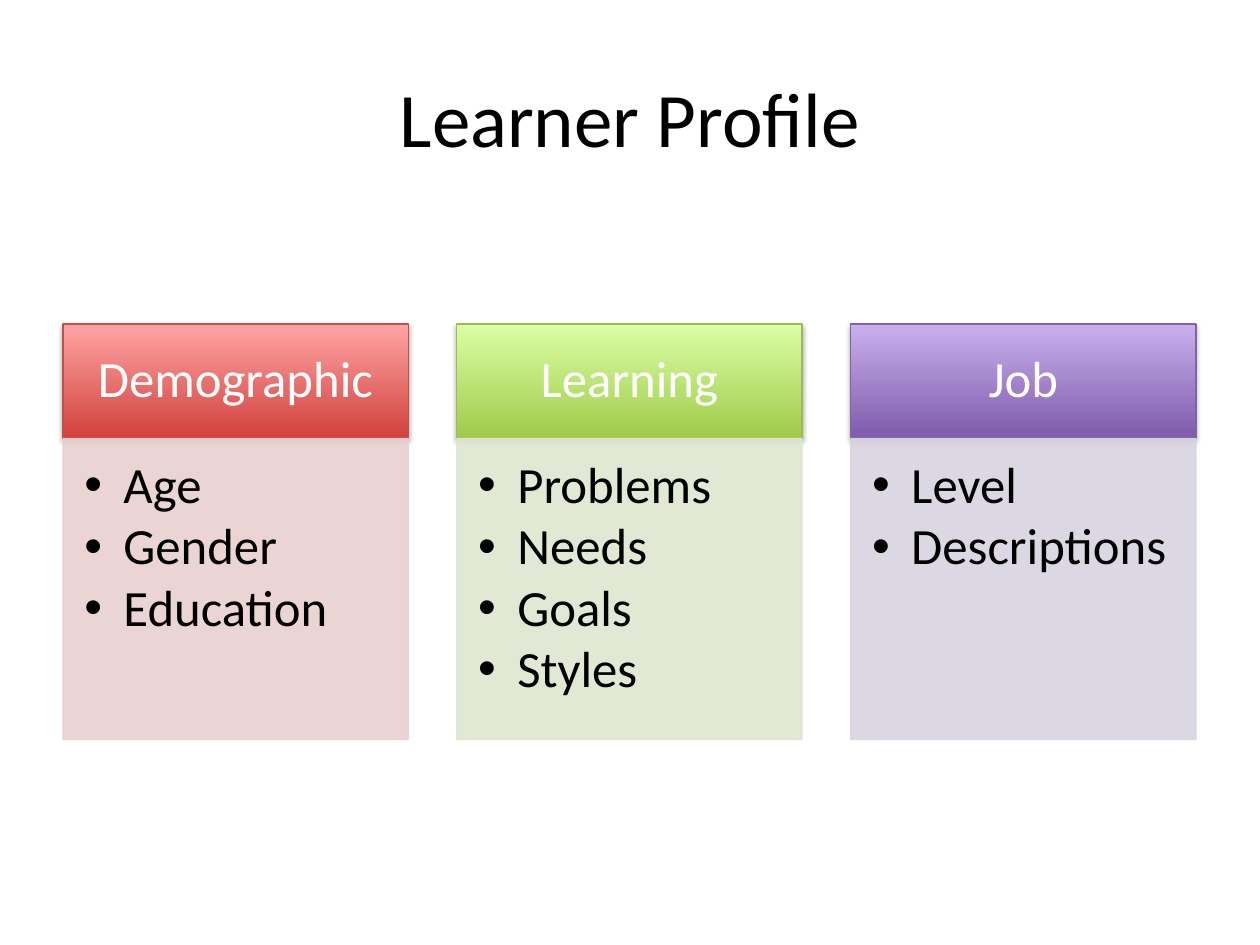
from lxml import etree
from pptx import Presentation
from pptx.dml.color import RGBColor
from pptx.enum.shapes import MSO_SHAPE
from pptx.enum.text import MSO_ANCHOR, PP_ALIGN
from pptx.oxml.ns import qn
from pptx.util import Cm, Pt

RECTANGLE = MSO_SHAPE.RECTANGLE
TOP, MIDDLE = MSO_ANCHOR.TOP, MSO_ANCHOR.MIDDLE
LEFT, CENTER = PP_ALIGN.LEFT, PP_ALIGN.CENTER

FONT = "Calibri"
BLACK = RGBColor(0x00, 0x00, 0x00)
WHITE = RGBColor(0xFF, 0xFF, 0xFF)
RED_DARK = RGBColor(0xD1, 0x40, 0x3C)
RED_LIGHT = RGBColor(0xFF, 0xA6, 0xA5)
RED_LINE = RGBColor(0xC0, 0x50, 0x4D)
RED_PALE = RGBColor(0xE8, 0xD0, 0xD0)
GREEN_DARK = RGBColor(0xA0, 0xCA, 0x4A)
GREEN_LIGHT = RGBColor(0xDA, 0xFF, 0xA5)
GREEN_LINE = RGBColor(0x9B, 0xBB, 0x59)
GREEN_PALE = RGBColor(0xDE, 0xE7, 0xD1)
PURPLE_DARK = RGBColor(0x7F, 0x5B, 0xAB)
PURPLE_LIGHT = RGBColor(0xC8, 0xB0, 0xED)
PURPLE_LINE = RGBColor(0x80, 0x64, 0xA2)
PURPLE_PALE = RGBColor(0xD8, 0xD3, 0xE0)

COLUMNS = [
    ("Demographic", ["Age", "Gender", "Education"],
     (RED_DARK, RED_LIGHT, RED_LINE, RED_PALE)),
    ("Learning", ["Problems", "Needs", "Goals", "Styles"],
     (GREEN_DARK, GREEN_LIGHT, GREEN_LINE, GREEN_PALE)),
    ("Job", ["Level", "Descriptions"],
     (PURPLE_DARK, PURPLE_LIGHT, PURPLE_LINE, PURPLE_PALE)),
]


def add_sub(parent, tag, **attributes):
    return etree.SubElement(parent, qn(tag), attributes)


def write_text(sp, text, size, color, align, anchor, insets=None):
    tf = sp.text_frame
    tf.word_wrap = True
    tf.vertical_anchor = anchor
    if insets:
        tf.margin_left, tf.margin_top, tf.margin_right, tf.margin_bottom = map(Cm, insets)
    tf.text = text
    for p in tf.paragraphs:
        p.alignment = align
        for r in p.runs:
            r.font.name = FONT
            r.font.size = Pt(size)
            r.font.color.rgb = color
    return tf


def add_title(slide, left, top, width, height):
    sp = slide.shapes.add_textbox(left, top, width, height)
    write_text(sp, "Learner Profile", 44, BLACK, CENTER, MIDDLE)


def add_box(slide, left, top, width, height, line_color):
    sp = slide.shapes.add_shape(RECTANGLE, left, top, width, height)
    sp.line.color.rgb = line_color
    sp.line.width = Pt(0.75)
    sp.shadow.inherit = False
    return sp


def add_header(slide, left, top, width, height, text, dark, light, line_color):
    sp = add_box(slide, left, top, width, height, line_color)
    sp.fill.gradient()
    sp.fill.gradient_angle = 90
    for stop, color in zip(sp.fill.gradient_stops, (dark, light)):
        stop.color.rgb = color
    effects = sp._element.spPr.find(qn("a:effectLst"))
    shadow = add_sub(effects, "a:outerShdw", blurRad=str(Pt(3.1)), dist=str(Pt(1.8)),
                     dir="5400000", rotWithShape="0")
    add_sub(add_sub(shadow, "a:srgbClr", val="000000"), "a:alpha", val="35000")
    tf = write_text(sp, text, 29, WHITE, CENTER, MIDDLE, (0.58, 0.33, 0.58, 0.33))
    tf.paragraphs[0].line_spacing = 0.9


def add_list(slide, left, top, width, height, items, color):
    sp = add_box(slide, left, top, width, height, color)
    sp.fill.solid()
    sp.fill.fore_color.rgb = color
    for solid_color in sp._element.spPr.iter(qn("a:srgbClr")):
        add_sub(solid_color, "a:alpha", val="90000")
    tf = write_text(sp, "\n".join(items), 29, BLACK, LEFT, TOP, (0.43, 0.43, 0.58, 0.63))
    for p in tf.paragraphs:
        p.line_spacing = 0.9
        p.space_after = Pt(3.7)
        pPr = p._p.get_or_add_pPr()
        pPr.set("marL", str(Cm(0.79)))
        pPr.set("indent", str(Cm(-0.79)))
        add_sub(pPr, "a:buFont", typeface="Arial")
        add_sub(pPr, "a:buChar", char="•")


def add_column(slide, left, top, width, height, heading, items, colors):
    header_height = Cm(2.31)
    dark, light, line_color, pale = colors
    add_header(slide, left, top, width, header_height, heading, dark, light, line_color)
    add_list(slide, left, top + header_height, width, height - header_height, items, pale)


def add_columns(slide, left, top, width, height):
    column_width = Cm(6.96)
    step = (width - column_width) // (len(COLUMNS) - 1)
    for i, (heading, items, colors) in enumerate(COLUMNS):
        add_column(slide, left + i * step, top, column_width, height, heading, items, colors)


def main():
    prs = Presentation()
    prs.slide_width = Cm(25.4)
    prs.slide_height = Cm(19.05)
    slide = prs.slides.add_slide(prs.slide_layouts[6])
    add_title(slide, Cm(1.27), Cm(0.76), Cm(22.86), Cm(3.18))
    add_columns(slide, Cm(1.27), Cm(6.53), Cm(22.84), Cm(8.38))
    prs.save("out.pptx")


if __name__ == "__main__":
    main()
